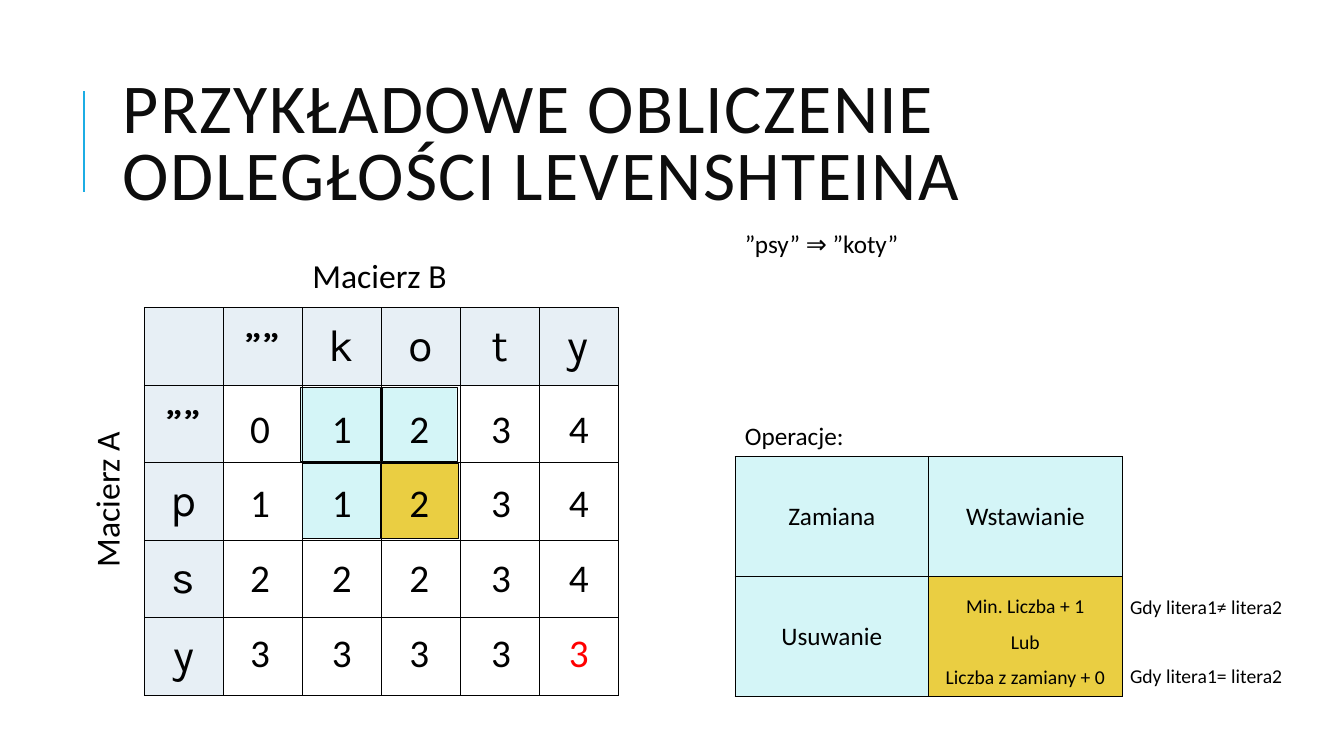
from dataclasses import dataclass
from typing import Optional

from lxml import etree
from pptx import Presentation
from pptx import util as u
from pptx.dml.color import RGBColor
from pptx.enum import shapes, text
from pptx.oxml.ns import qn


@dataclass(frozen=True)
class Theme:
    font: str = "Calibri"
    letter_font: str = "Karla"
    ink: str = "000000"
    title_ink: str = "0D0D0D"
    accent: str = "1CADE4"
    header: str = "E7EFF5"
    cyan: str = "D4F5F7"
    gold: str = "EACE42"
    red: str = "FF0000"
    title: int = 50
    letter: int = 32
    number: int = 28
    axis: int = 24
    body: int = 18
    small: int = 14


T = Theme()


@dataclass(frozen=True)
class Box:
    left: float
    top: float
    width: float
    height: float

    def emu(self) -> list:
        return [u.Inches(v) for v in (self.left, self.top, self.width, self.height)]


@dataclass(frozen=True)
class Highlight:
    box: Box
    color: str


@dataclass(frozen=True)
class Label:
    text: str
    box: Box
    size: int
    rotation: int = 0


@dataclass(frozen=True)
class Cell:
    text: str = ""
    fill: Optional[str] = None
    size: int = T.body
    font: str = T.font
    spacing: Optional[float] = None


def write(tf, content: str, *, size: int, color: str = T.ink, font: str = T.font,
          align=None, spacing: Optional[float] = None, tracking: int = 0) -> None:
    """Fill a text frame, one paragraph per line."""
    for i, line in enumerate(content.split("\n")):
        p = tf.add_paragraph() if i else tf.paragraphs[0]
        p.alignment = align
        p.line_spacing = spacing
        r = p.add_run()
        r.text = line
        r.font.size = u.Pt(size)
        r.font.name = font
        r.font.color.rgb = RGBColor.from_string(color)
        if tracking:
            r._r.get_or_add_rPr().set("spc", str(tracking))


def add_text(s, box: Box, content: str, *, rotation: int = 0,
             anchor=text.MSO_ANCHOR.TOP, grow: bool = True, **fmt) -> None:
    sp = s.shapes.add_textbox(*box.emu())
    sp.rotation = rotation
    tf = sp.text_frame
    tf.word_wrap = True
    tf.vertical_anchor = anchor
    if grow:
        tf.auto_size = text.MSO_AUTO_SIZE.SHAPE_TO_FIT_TEXT
    write(tf, content, **fmt)


def add_highlight(s, item: Highlight) -> None:
    sp = s.shapes.add_shape(shapes.MSO_SHAPE.RECTANGLE, *item.box.emu())
    sp.shadow.inherit = False
    sp.fill.solid()
    sp.fill.fore_color.rgb = RGBColor.from_string(item.color)
    sp.line.color.rgb = RGBColor.from_string(T.ink)
    sp.line.width = u.Pt(0.25)


def add_borders(cell) -> None:
    tcPr = cell._tc.get_or_add_tcPr()
    for i, side in enumerate(("lnL", "lnR", "lnT", "lnB")):
        ln = etree.Element(qn(f"a:{side}"), w=str(u.Pt(0.5)))
        fill = etree.SubElement(ln, qn("a:solidFill"))
        etree.SubElement(fill, qn("a:srgbClr"), val=T.ink)
        tcPr.insert(i, ln)


def add_grid(s, box: Box, rows: list[list[Cell]]) -> None:
    n_rows, n_cols = len(rows), len(rows[0])
    table = s.shapes.add_table(n_rows, n_cols, *box.emu()).table
    table.first_row = table.horz_banding = False
    for col in table.columns:
        col.width = u.Inches(box.width / n_cols)
    for row in table.rows:
        row.height = u.Inches(box.height / n_rows)
    for i, row in enumerate(rows):
        for j, item in enumerate(row):
            cell = table.cell(i, j)
            cell.vertical_anchor = text.MSO_ANCHOR.MIDDLE
            if item.fill:
                cell.fill.solid()
                cell.fill.fore_color.rgb = RGBColor.from_string(item.fill)
            else:
                cell.fill.background()
            if item.text:
                write(cell.text_frame, item.text, size=item.size, font=item.font,
                      align=text.PP_ALIGN.CENTER, spacing=item.spacing)
            add_borders(cell)


def letter(char: str) -> Cell:
    return Cell(char, T.header, T.letter, T.letter_font)


# Distance matrix for the two words
COLUMN_LETTERS = ["””", *"koty"]
ROW_LETTERS = ["””", *"psy"]
DISTANCES = ["01234", "11234", "22234", "33333"]
NUMBER_LEFTS = [2.28, 3.09, 3.86, 4.67, 5.44]
NUMBER_TOP, NUMBER_STEP = 3.96, 0.74
MATRIX = [[letter(c) for c in ["", *COLUMN_LETTERS]]]
MATRIX += [[letter(c)] + [Cell()] * len(COLUMN_LETTERS) for c in ROW_LETTERS]

# Legend of operations
OPERATIONS = [
    [Cell("Zamiana", T.cyan), Cell("Wstawianie", T.cyan)],
    [Cell("Usuwanie", T.cyan),
     Cell("Min. Liczba + 1\nLub\nLiczba z zamiany + 0", T.gold, T.small, spacing=1.5)],
]

HIGHLIGHTS_BELOW = [
    Highlight(Box(3.79, 3.84, 0.74, 0.74), T.cyan),
    Highlight(Box(3.78, 4.6, 0.77, 0.74), T.gold),
    Highlight(Box(2.98, 3.84, 0.77, 0.74), T.cyan),
]
HIGHLIGHTS_ABOVE = [Highlight(Box(3, top, 0.77, 0.74), T.cyan) for top in (4.6, 3.84)]

LABELS = [
    Label("Macierz B", Box(3, 2.48, 1.67, 0.5), T.axis),
    Label("Macierz A", Box(0.22, 4.64, 1.67, 0.5), T.axis, 270),
    Label("Operacje:", Box(7.29, 4.12, 3.01, 0.4), T.body),
    Label("Gdy litera1≠ litera2", Box(11.11, 5.85, 1.97, 0.34), T.small),
    Label("Gdy litera1= litera2", Box(11.11, 6.54, 1.97, 0.34), T.small),
    Label("”psy” ⇒ ”koty”", Box(7.29, 2.22, 3.75, 0.4), T.body),
]


def main() -> None:
    prs = Presentation()
    prs.slide_width, prs.slide_height = u.Inches(13.33), u.Inches(7.5)
    s = prs.slides.add_slide(prs.slide_layouts[6])

    # Title with accent line
    rule = s.shapes.add_connector(shapes.MSO_CONNECTOR.STRAIGHT, u.Inches(0.83),
                                  u.Inches(1.9), u.Inches(0.83), u.Inches(0.9))
    rule.line.color.rgb = RGBColor.from_string(T.accent)
    rule.line.width = u.Pt(1.5)
    etree.SubElement(rule._element.spPr, qn("a:effectLst"))
    add_text(s, Box(1.12, 0.64, 11.29, 1.64),
             "PRZYKŁADOWE OBLICZENIE ODLEGŁOŚCI LEVENSHTEINA",
             anchor=text.MSO_ANCHOR.MIDDLE, grow=False, size=T.title,
             color=T.title_ink, spacing=0.8, tracking=100)

    # Tables between the highlighted cells
    for item in HIGHLIGHTS_BELOW:
        add_highlight(s, item)
    add_grid(s, Box(1.43, 3.05, 4.7, 3.85), MATRIX)
    add_grid(s, Box(7.29, 4.53, 3.84, 2.38), OPERATIONS)
    for item in HIGHLIGHTS_ABOVE:
        add_highlight(s, item)

    # Matrix numbers, the final distance in red
    result = (len(ROW_LETTERS) - 1, len(COLUMN_LETTERS) - 1)
    for i, row in enumerate(DISTANCES):
        for j, number in enumerate(row):
            add_text(s, Box(NUMBER_LEFTS[j], NUMBER_TOP + i * NUMBER_STEP, 0.6, 0.57),
                     number, size=T.number, align=text.PP_ALIGN.CENTER,
                     color=T.red if (i, j) == result else T.ink)

    # Captions
    for label in LABELS:
        add_text(s, label.box, label.text, size=label.size, rotation=label.rotation)

    prs.save("out.pptx")


if __name__ == "__main__":
    main()
